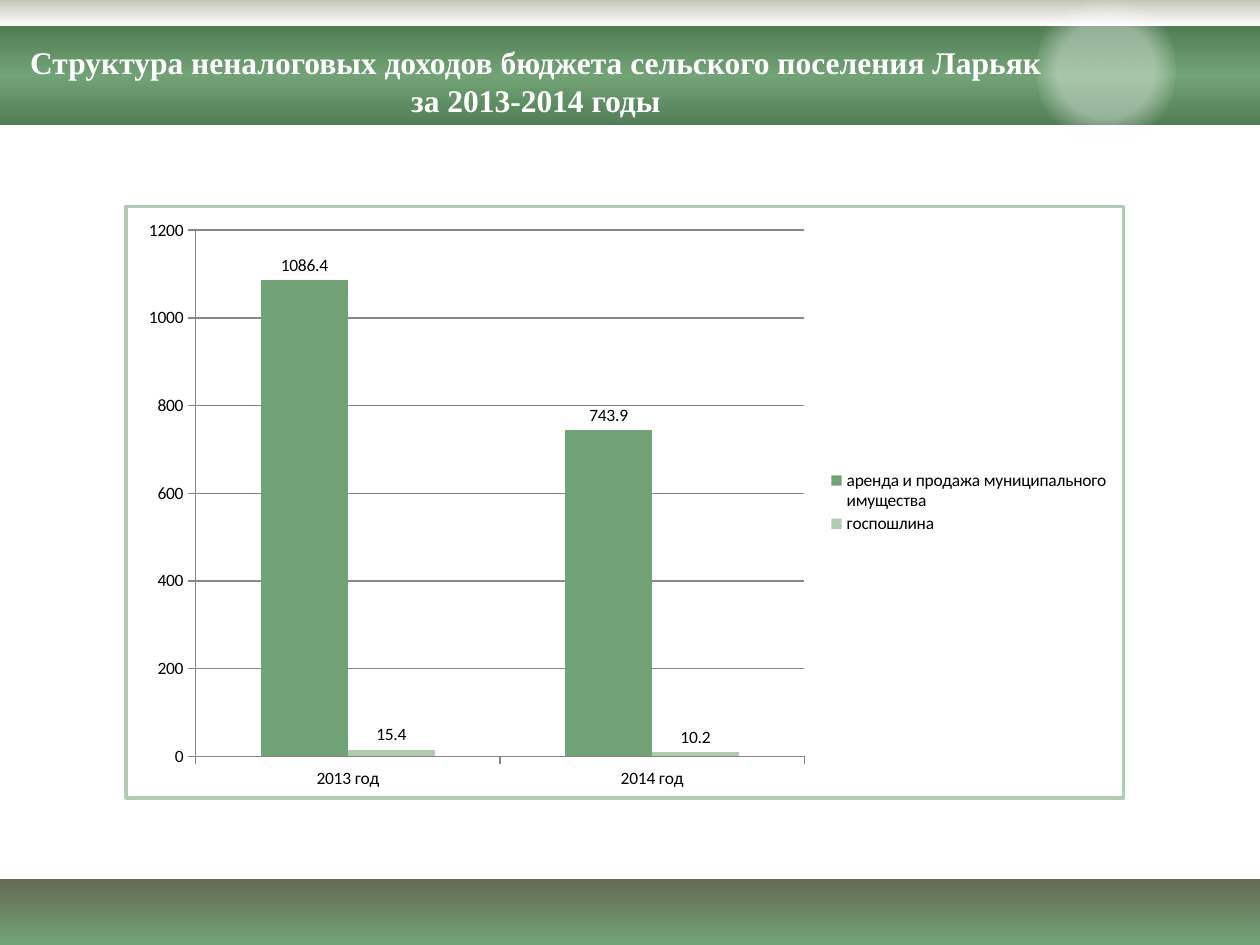
from lxml import etree
from pptx import Presentation
from pptx.chart.data import CategoryChartData
from pptx.dml.color import RGBColor
from pptx.enum.chart import XL_CHART_TYPE as CT, XL_LABEL_POSITION as LP
from pptx.enum.chart import XL_LEGEND_POSITION as LGP, XL_TICK_MARK as TM
from pptx.enum.shapes import MSO_SHAPE as SH
from pptx.enum.text import PP_ALIGN as AL
from pptx.oxml import parse_xml
from pptx.oxml.ns import nsdecls, qn
from pptx.util import Pt

COLORS = {
    "white": "FFFFFF", "black": "000000", "olive": "676A55", "sand": "C4C6B8",
    "green": "72A376", "dark": "527E56", "pale": "B0CCB0", "axis": "868686",
}


def rgb(name):
    """Return the named colour."""
    return RGBColor.from_string(COLORS[name])


class SlideBuilder:
    """Holds the style and the current slide."""

    def __init__(self, prs):
        self.s = prs.slides.add_slide(prs.slide_layouts[6])
        self.title_font, self.title_size = "Times New Roman", Pt(18)
        self.chart_font, self.chart_size = "Calibri", Pt(10)

    def gradient(self, kind, box, stops, radial=False):
        """Add a borderless shape filled with (position, colour, opacity) stops."""
        sp = self.s.shapes.add_shape(kind, *map(Pt, box))
        sp.shadow.inherit = False
        sp.line.fill.background()
        sp.fill.gradient()
        grad = sp.element.spPr.find(qn("a:gradFill"))
        for child in list(grad):
            grad.remove(child)
        gs_list = etree.SubElement(grad, qn("a:gsLst"))
        for pos, color, alpha in stops:
            gs = etree.SubElement(gs_list, qn("a:gs"), pos=str(pos * 1000))
            clr = etree.SubElement(gs, qn("a:srgbClr"), val=COLORS[color])
            if alpha < 100:
                etree.SubElement(clr, qn("a:alpha"), val=str(alpha * 1000))
        if radial:
            focus = etree.SubElement(grad, qn("a:path"), path="circle")
            etree.SubElement(focus, qn("a:fillToRect"), dict.fromkeys("ltrb", "50000"))
        else:
            etree.SubElement(grad, qn("a:lin"), ang="5400000", scaled="0")

    def title(self, box, text):
        """Add the centred slide title."""
        tf = self.s.shapes.add_textbox(*map(Pt, box)).text_frame
        tf.word_wrap = True
        p = tf.paragraphs[0]
        p.alignment = AL.CENTER
        r = p.add_run()
        r.text = text
        r.font.name, r.font.size, r.font.bold = self.title_font, self.title_size, True
        r.font.color.rgb = rgb("white")

    def layout(self, parent, index, x, y, w, h, inner=False):
        """Fix the place of a chart part as fractions of the chart."""
        for old in parent.findall(qn("c:layout")):
            parent.remove(old)
        target = '<c:layoutTarget val="inner"/>' if inner else ""
        parent.insert(index, parse_xml(
            f'<c:layout {nsdecls("c")}><c:manualLayout>{target}'
            '<c:xMode val="edge"/><c:yMode val="edge"/>'
            f'<c:x val="{x}"/><c:y val="{y}"/><c:w val="{w}"/><c:h val="{h}"/>'
            '</c:manualLayout></c:layout>'))

    def columns(self, box, cats, series):
        """Add a framed column chart from (name, colour, values) series."""
        data = CategoryChartData()
        data.categories = cats
        for name, _, values in series:
            data.add_series(name, values)
        chart = self.s.shapes.add_chart(CT.COLUMN_CLUSTERED, *map(Pt, box), data).chart
        chart.has_title = False
        font = chart.font
        font.name, font.size, font.color.rgb = self.chart_font, self.chart_size, rgb("black")
        chart.element.find(qn("c:chart")).addnext(parse_xml(
            f'<c:spPr {nsdecls("c", "a")}><a:solidFill><a:srgbClr val="{COLORS["white"]}"/>'
            f'</a:solidFill><a:ln w="{Pt(2)}"><a:solidFill><a:srgbClr val="{COLORS["pale"]}"/>'
            '</a:solidFill><a:round/></a:ln></c:spPr>'))
        plot = chart.plots[0]
        plot.gap_width, plot.overlap, plot.vary_by_categories = 150, 0, False
        for ser, (_, color, _) in zip(plot.series, series):
            ser.format.fill.solid()
            ser.format.fill.fore_color.rgb = rgb(color)
            labels = ser.data_labels
            labels.show_value, labels.position = True, LP.OUTSIDE_END
        value = chart.value_axis
        value.minimum_scale, value.maximum_scale, value.major_unit = 0, 1200, 200
        value.has_major_gridlines = True
        for axis in (value, chart.category_axis):
            axis.major_tick_mark, axis.minor_tick_mark = TM.OUTSIDE, TM.NONE
        for part in (value, chart.category_axis, value.major_gridlines):
            part.format.line.color.rgb = rgb("axis")
            part.format.line.width = Pt(0.75)
        chart.has_legend = True
        chart.legend.position = LGP.RIGHT
        chart.legend.include_in_layout = False
        area = chart.element.find(".//" + qn("c:plotArea"))
        self.layout(area, 0, 0.07, 0.04, 0.61, 0.89, inner=True)
        self.layout(chart.element.find(".//" + qn("c:legend")), 1, 0.7, 0.44, 0.29, 0.12)


def main():
    """Build the slide."""
    prs = Presentation()
    prs.slide_width, prs.slide_height = Pt(720), Pt(540)
    b = SlideBuilder(prs)
    b.gradient(SH.RECTANGLE, (0, 502.5, 720, 37.5), [(0, "olive", 100), (100, "green", 100)])
    b.gradient(SH.RECTANGLE, (0, 0, 720, 15), [(0, "sand", 100), (100, "white", 100)])
    b.gradient(SH.RECTANGLE, (0, 15, 720, 56.5),
               [(0, "dark", 100), (50, "green", 100), (100, "dark", 100)])
    b.gradient(SH.OVAL, (592.5, -8, 79, 96.5), [(44, "white", 38), (67, "white", 0)], radial=True)
    b.title((8.5, 21, 595.5, 72.5),
            "Структура неналоговых доходов бюджета сельского поселения Ларьяк за 2013-2014 годы")
    b.columns((71, 117, 572, 340), ["2013 год", "2014 год"], [
        ("аренда и продажа муниципального имущества", "green", (1086.4, 743.9)),
        ("госпошлина", "pale", (15.4, 10.2)),
    ])
    prs.save("out.pptx")


if __name__ == "__main__":
    main()
